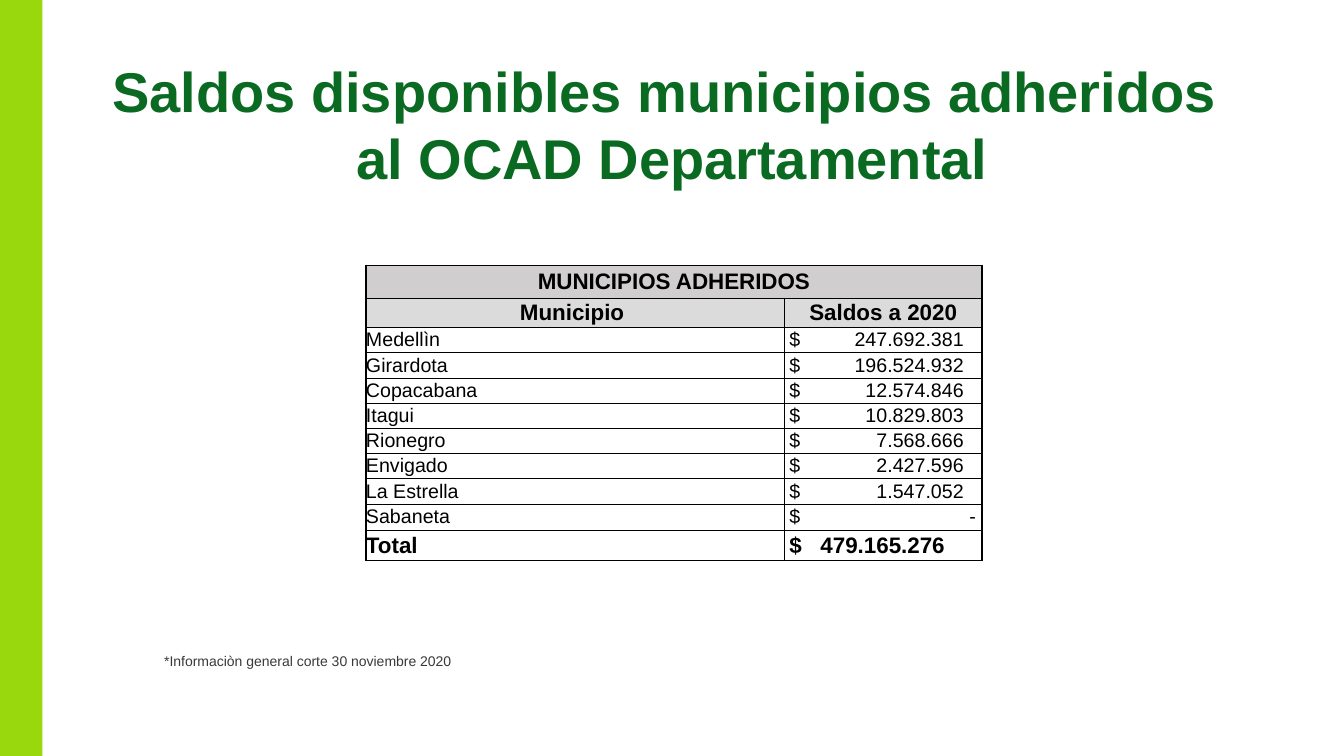
from lxml import etree
from pptx import Presentation
from pptx.dml.color import RGBColor
from pptx.enum.shapes import MSO_SHAPE
from pptx.enum.text import MSO_ANCHOR, PP_ALIGN
from pptx.oxml.ns import qn
from pptx.util import Pt

PX = 9144
RECT = MSO_SHAPE.RECTANGLE
MIDDLE = MSO_ANCHOR.MIDDLE
LEFT, CENTER = PP_ALIGN.LEFT, PP_ALIGN.CENTER

LIME = RGBColor(0x99, 0xD8, 0x0D)
GREEN = RGBColor(0x0A, 0x6A, 0x21)
GRAY = RGBColor(0x3B, 0x38, 0x38)
BLACK = RGBColor(0, 0, 0)
HEAD = RGBColor(0xD0, 0xCE, 0xCE)
SUBHEAD = RGBColor(0xDB, 0xDB, 0xDB)

TITLE = ["Saldos disponibles municipios adheridos ", "al OCAD Departamental"]
NOTE = ["*Informaciòn general corte 30 noviembre 2020"]
TOWNS = [
    ("Medellìn", "247.692.381"),
    ("Girardota", "196.524.932"),
    ("Copacabana", "12.574.846"),
    ("Itagui", "10.829.803"),
    ("Rionegro", "7.568.666"),
    ("Envigado", "2.427.596"),
    ("La Estrella", "1.547.052"),
    ("Sabaneta", "-"),
]
COLS = [415, 196]
ROWS = [33, 29] + [25] * 7 + [26, 30]
TOTAL = len(ROWS) - 1
INDENT = 5
TAB, DASH_TAB, TOTAL_TAB = 173, 185, 154


def px(*sizes):
    return [size * PX for size in sizes]


def style(para, size, color, bold=False, align=LEFT):
    para.alignment = align
    font = para.font
    font.name = "Arial"
    font.size = Pt(size)
    font.bold = bold
    font.color.rgb = color


def add_text(slide, box, lines, size, color, bold=False, align=LEFT):
    frame = slide.shapes.add_textbox(*px(*box)).text_frame
    frame.word_wrap = True
    for i, line in enumerate(lines):
        para = frame.add_paragraph() if i else frame.paragraphs[0]
        para.text = line
        style(para, size, color, bold, align)


def add_bar(slide, box, color):
    bar = slide.shapes.add_shape(RECT, *px(*box))
    bar.shadow.inherit = False
    bar.fill.solid()
    bar.fill.fore_color.rgb = color
    bar.line.fill.background()


def add_edges(cell, row, col):
    thick = {
        "L": row == 0 or col == 0,
        "R": row == 0 or col == 1,
        "T": row in (0, 1, TOTAL),
        "B": row in (0, TOTAL - 1, TOTAL),
    }
    props = cell._tc.get_or_add_tcPr()
    for side, heavy in thick.items():
        width = Pt(1 if heavy else 0.5)
        line = etree.SubElement(props, qn(f"a:ln{side}"), w=str(width))
        fill = etree.SubElement(line, qn("a:solidFill"))
        etree.SubElement(fill, qn("a:srgbClr"), val=str(BLACK))


def add_tab(para, spot):
    tabs = etree.SubElement(para._p.get_or_add_pPr(), qn("a:tabLst"))
    etree.SubElement(tabs, qn("a:tab"), pos=str(spot * PX), algn="r")


def fill_cell(cell, text, row, col):
    add_edges(cell, row, col)
    cell.margin_left = cell.margin_right = 0
    cell.margin_top = cell.margin_bottom = 0
    cell.vertical_anchor = MIDDLE
    if row < 2:
        cell.fill.solid()
        cell.fill.fore_color.rgb = SUBHEAD if row else HEAD
    else:
        cell.fill.background()
    para = cell.text_frame.paragraphs[0]
    if row > 1 and col == 1:
        cell.margin_left = INDENT * PX
        spot = TOTAL_TAB if row == TOTAL else DASH_TAB if text == "-" else TAB
        add_tab(para, spot)
        text = f"$\t{text}"
    para.text = text
    strong = row < 2 or row == TOTAL
    style(para, 16 if strong else 14, BLACK, strong,
          CENTER if row < 2 else LEFT)


def add_grid(slide, left, top):
    size = px(left, top, sum(COLS), sum(ROWS))
    table = slide.shapes.add_table(len(ROWS), len(COLS), *size).table
    table.first_row = table.horz_banding = False
    for column, width in zip(table.columns, COLS):
        column.width = width * PX
    for row, height in zip(table.rows, ROWS):
        row.height = height * PX
    data = [("MUNICIPIOS ADHERIDOS", ""), ("Municipio ", "Saldos a 2020"),
            *TOWNS, ("Total", "479.165.276")]
    for i, texts in enumerate(data):
        for j, text in enumerate(texts):
            fill_cell(table.cell(i, j), text, i, j)
    table.cell(0, 0).merge(table.cell(0, 1))


def main():
    deck = Presentation()
    deck.slide_width, deck.slide_height = px(1333, 750)
    slide = deck.slides.add_slide(deck.slide_layouts[6])
    add_text(slide, (13, 51, 1307, 212), TITLE, 40, GREEN, True, CENTER)
    add_text(slide, (153, 642, 424, 28), NOTE, 10, GRAY)
    add_bar(slide, (0, 0, 42, 750), LIME)
    add_grid(slide, 363, 263)
    deck.save("out.pptx")


if __name__ == "__main__":
    main()
